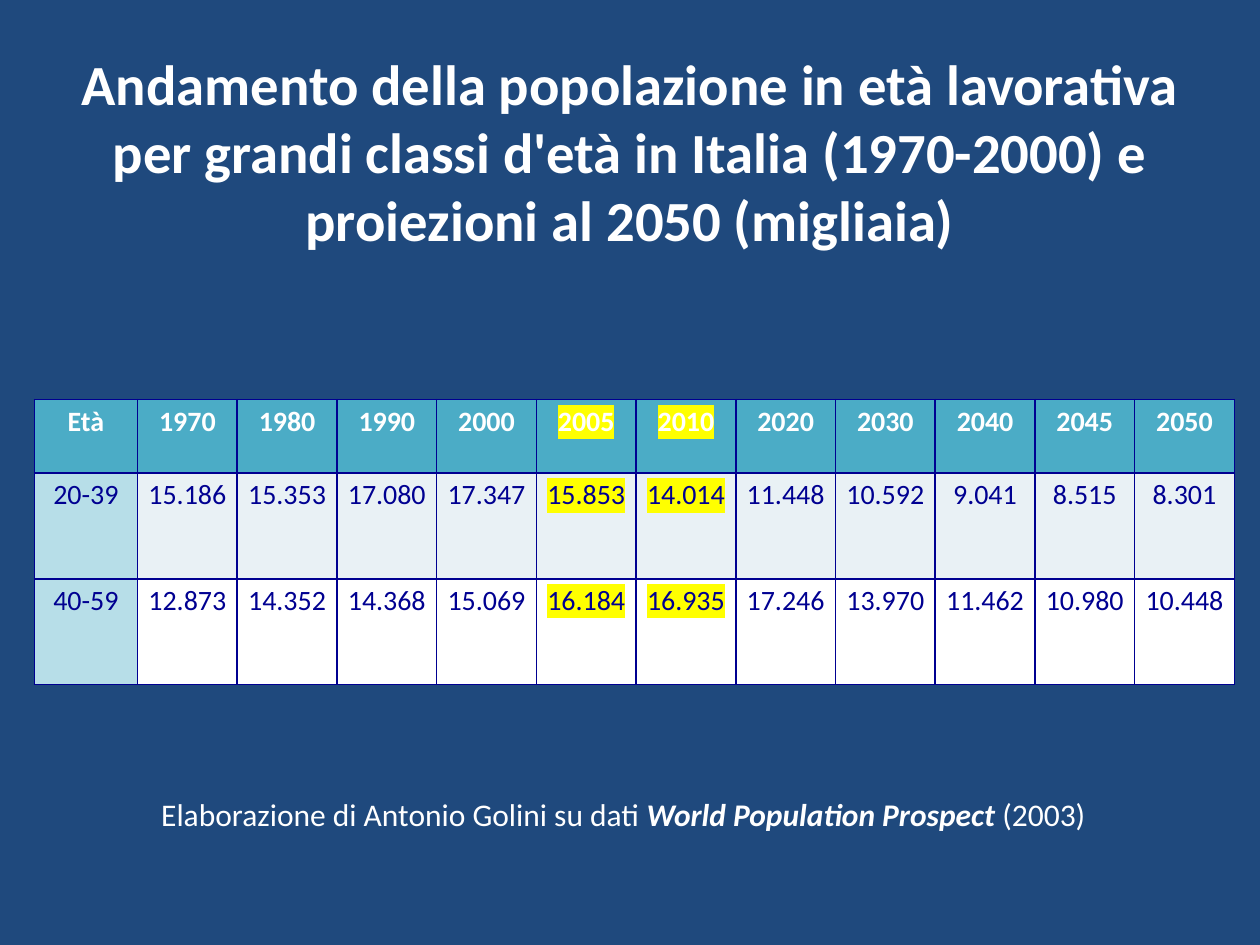
from pptx import Presentation
from pptx.dml.color import RGBColor
from pptx.enum.text import MSO_ANCHOR, PP_ALIGN
from pptx.oxml.ns import qn
from pptx.util import Pt
from lxml import etree

CENTER = PP_ALIGN.CENTER
LEFT = PP_ALIGN.LEFT
TOP = MSO_ANCHOR.TOP
MIDDLE = MSO_ANCHOR.MIDDLE

NAVY = RGBColor(0x1F, 0x49, 0x7D)
WHITE = RGBColor(0xFF, 0xFF, 0xFF)
INK = RGBColor(0x00, 0x00, 0x91)
TEAL = RGBColor(0x4B, 0xAC, 0xC6)
PALE_TEAL = RGBColor(0xB7, 0xDE, 0xE8)
MIST = RGBColor(0xE9, 0xF1, 0xF5)
YELLOW = RGBColor(0xFF, 0xFF, 0x00)

ROWS = [
    "Età 1970 1980 1990 2000 2005 2010 2020 2030 2040 2045 2050".split(),
    "20-39 15.186 15.353 17.080 17.347 15.853 14.014 11.448 10.592 9.041 8.515 8.301".split(),
    "40-59 12.873 14.352 14.368 15.069 16.184 16.935 17.246 13.970 11.462 10.980 10.448".split(),
]
ROW_FILLS = [(TEAL, TEAL), (PALE_TEAL, MIST), (PALE_TEAL, WHITE)]
HIGHLIGHTED_YEARS = ("2005", "2010")


class Deck:
    font = "Calibri"

    def __init__(self, width, height, background):
        self.prs = Presentation()
        self.prs.slide_width, self.prs.slide_height = Pt(width), Pt(height)
        self.s = self.prs.slides.add_slide(self.prs.slide_layouts[6])
        self.s.background.fill.solid()
        self.s.background.fill.fore_color.rgb = background

    def style(self, p, size, color, bold=False, align=LEFT):
        p.alignment = align
        p.font.name = self.font
        p.font.size = Pt(size)
        p.font.bold = bold
        p.font.color.rgb = color

    def text(self, box, runs, size, color, bold=False, align=LEFT,
             anchor=TOP, wrap=True, bottom=3.6):
        sp = self.s.shapes.add_textbox(*map(Pt, box))
        tf = sp.text_frame
        tf.word_wrap = wrap
        tf.vertical_anchor = anchor
        tf.margin_bottom = Pt(bottom)
        p = tf.paragraphs[0]
        self.style(p, size, color, bold, align)
        for words, emphasis in runs:
            r = p.add_run()
            r.text = words
            if emphasis:
                r.font.bold = r.font.italic = True

    def highlight(self, r, color):
        mark = etree.SubElement(r._r.get_or_add_rPr(), qn("a:highlight"))
        etree.SubElement(mark, qn("a:srgbClr"), val=str(color))

    def borders(self, cell, color, width):
        tcPr = cell._tc.get_or_add_tcPr()
        for i, side in enumerate(("a:lnL", "a:lnR", "a:lnT", "a:lnB")):
            ln = etree.Element(qn(side), w=str(Pt(width)))
            fill = etree.SubElement(ln, qn("a:solidFill"))
            etree.SubElement(fill, qn("a:srgbClr"), val=str(color))
            tcPr.insert(i, ln)

    def cell(self, cell, words, fill, color, bold, marked):
        cell.fill.solid()
        cell.fill.fore_color.rgb = fill
        cell.margin_left = cell.margin_right = Pt(3.6)
        cell.margin_top = cell.margin_bottom = 0
        p = cell.text_frame.paragraphs[0]
        self.style(p, 16, color, bold, CENTER)
        p.line_spacing = 1.15
        r = p.add_run()
        r.text = words
        if marked:
            self.highlight(r, YELLOW)
        self.borders(cell, INK, 1)

    def table(self, left, top, widths, heights, rows):
        table = self.s.shapes.add_table(
            len(rows), len(widths), Pt(left), Pt(top),
            Pt(sum(widths)), Pt(sum(heights))).table
        table.horz_banding = False
        for column, width in zip(table.columns, widths):
            column.width = Pt(width)
        for row, height in zip(table.rows, heights):
            row.height = Pt(height)
        marked = [year in HIGHLIGHTED_YEARS for year in rows[0]]
        for i, row in enumerate(rows):
            header = i == 0
            for j, words in enumerate(row):
                self.cell(table.cell(i, j), words, ROW_FILLS[i][j > 0],
                          WHITE if header else INK, header, marked[j])


def main():
    deck = Deck(720, 540, NAVY)
    deck.text((36, 21.6, 648, 135.4),
              [("Andamento della popolazione in età lavorativa per grandi classi "
                "d'età in Italia (1970-2000) e proiezioni al 2050 (migliaia)", False)],
              32.4, WHITE, bold=True, align=CENTER, anchor=MIDDLE, bottom=9.6)
    deck.table(19.6, 228.4, [59] + [57] * 11, [42, 60.4, 60.4], ROWS)
    deck.text((85, 450.7, 550, 29),
              [("Elaborazione di Antonio Golini su dati ", False),
               ("World Population Prospect", True),
               (" (2003)", False)],
              18, WHITE, wrap=False)
    deck.prs.save("out.pptx")


if __name__ == "__main__":
    main()
